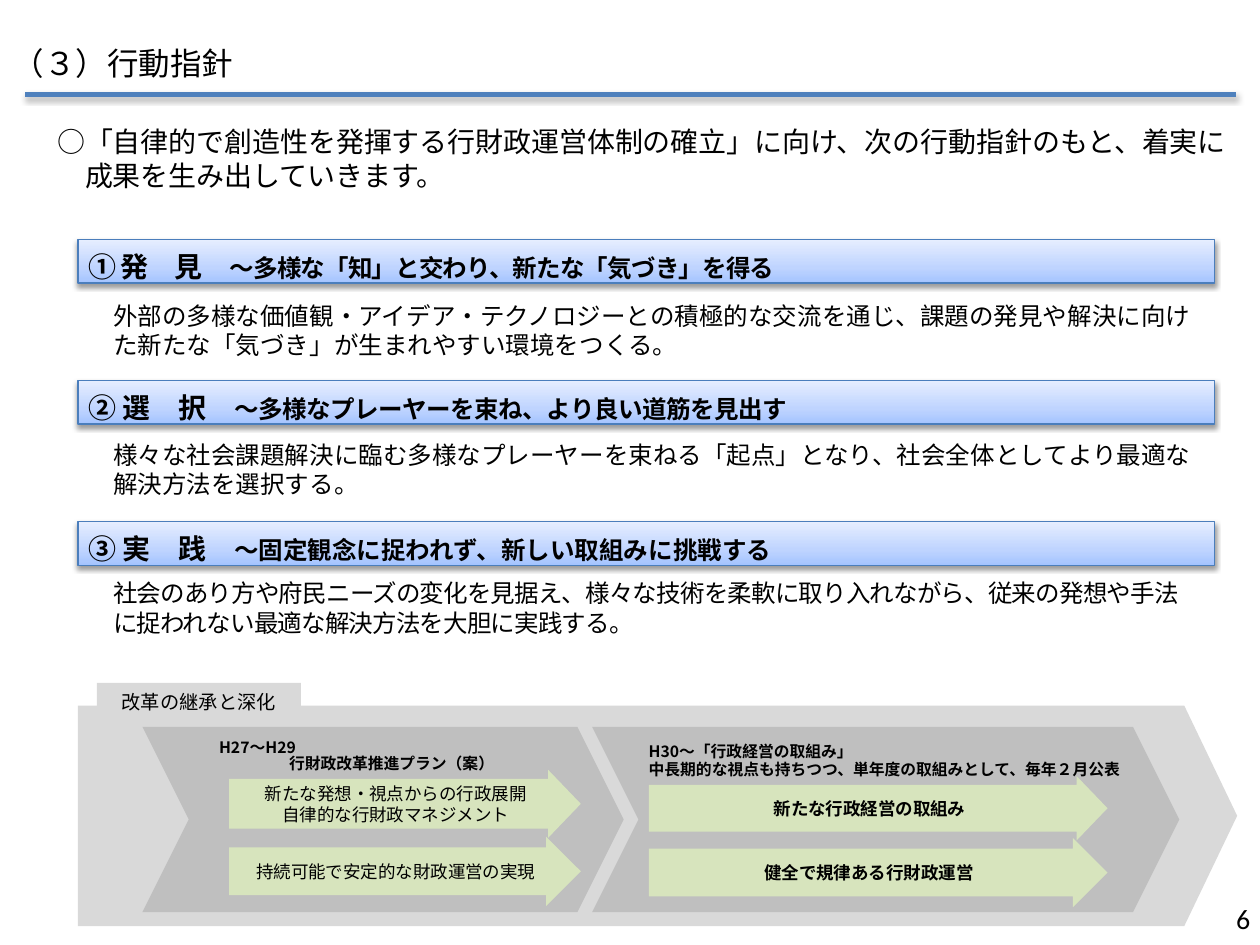
from lxml import etree
from pptx import Presentation
from pptx.dml import color
from pptx.enum import shapes, text
from pptx.oxml import ns
from pptx.util import Pt

# Content
TITLE = "（３）行動指針"
INTRO = "○\t「自律的で創造性を発揮する行財政運営体制の確立」に向け、次の行動指針のもと、着実に成果を生み出していきます。"
# Heading, its spacing, slogan, its spacing, description, its spacing
GUIDELINES = [
    ("① 発　見　", -50, "～多様な「知」と交わり、新たな「気づき」を得る", -50,
     "外部の多様な価値観・アイデア・テクノロジーとの積極的な交流を通じ、"
     "課題の発見や解決に向けた新たな「気づき」が生まれやすい環境をつくる。", 0),
    ("② 選　択　", 0, "～多様なプレーヤーを束ね、より良い道筋を見出す", -30,
     "様々な社会課題解決に臨む多様なプレーヤーを束ねる「起点」となり、"
     "社会全体としてより最適な解決方法を選択する。", 0),
    ("③ 実　践　", 0, "～固定観念に捉われず、新しい取組みに挑戦する", 0,
     "社会のあり方や府民ニーズの変化を見据え、様々な技術を柔軟に取り入れながら、"
     "従来の発想や手法に捉われない最適な解決方法を大胆に実践する。", -50),
]
ROADMAP_LABEL = "改革の継承と深化"
PHASES = [
    {"chevron": (81.4, 415.4, 275, 105.8), "caption": (118.1, 419.8, 200.9, 26),
     "lines": ["H27～H29", "行財政改革推進プラン（案）"], "leading": 9, "indents": [0, 40],
     "arrow_box": (131, 200.9), "bold": False,
     "arrows": [(439.9, 38.9, ["新たな発想・視点からの行政展開", "自律的な行財政マネジメント"]),
                (478.1, 39.6, ["持続可能で安定的な財政運営の実現"])]},
    {"chevron": (338.4, 415.4, 335.5, 105.8), "caption": (363.6, 421.2, 334, 37.4),
     "lines": ["H30～「行政経営の取組み」",
               "中長期的な視点も持ちつつ、単年度の取組みとして、毎年２月公表"],
     "leading": 10, "indents": [0, 0],
     "arrow_box": (370.8, 262.1), "bold": True,
     "arrows": [(443.5, 36.7, ["新たな行政経営の取組み"]),
                (478.8, 39.6, ["健全で規律ある行財政運営"])]},
]
ARROW_ADJUSTMENTS = [(0.73, 0.48), (0.69, 0.5)]
PAGE_NUMBER = "6"

THEME = {
    "font": "Noto Sans CJK JP", "number_font": "Calibri", "ink": "000000",
    "title": 18, "lead": 16, "body": 14, "label": 11, "arrow_text": 10, "caption": 9,
    "rule": "4F81BD", "banner_line": "4B7EBC",
    "banner": [(0, "A4C4FF"), (35, "BFD4FF"), (100, "E6EEFF")],
    "band": "D9D9D9", "chevron": "BFBFBF", "arrow": "D7E4BD",
}
LEFT, CENTER, RIGHT = text.PP_ALIGN.LEFT, text.PP_ALIGN.CENTER, text.PP_ALIGN.RIGHT
TOP, MIDDLE = text.MSO_ANCHOR.TOP, text.MSO_ANCHOR.MIDDLE
DEFAULT_INSETS = (7.2, 3.6, 7.2, 3.6)


def apply(target, values):
    for name, value in values.items():
        setattr(target, name, value)


def place(shape, box):
    apply(shape, dict(zip(("left", "top", "width", "height"), map(Pt, box))))


def format_frame(shape, anchor=TOP, insets=DEFAULT_INSETS):
    frame = shape.text_frame
    apply(frame, {"word_wrap": True, "auto_size": text.MSO_AUTO_SIZE.NONE,
                  "vertical_anchor": anchor})
    apply(frame, dict(zip(("margin_left", "margin_top", "margin_right", "margin_bottom"),
                          map(Pt, insets))))
    return frame


def add_run(paragraph, words, size, bold=False, spacing=0, font=THEME["font"]):
    run = paragraph.add_run()
    run.text = words
    apply(run.font, {"size": Pt(size), "bold": bold, "name": font})
    run.font.color.rgb = color.RGBColor.from_string(THEME["ink"])
    properties = run.font._element
    etree.SubElement(properties, ns.qn("a:ea"), typeface=font)
    if spacing:
        properties.set("spc", str(spacing))


def write(frame, lines, size, align=LEFT, leading=None, **run_format):
    for index, words in enumerate(lines):
        paragraph = frame.paragraphs[0] if index == 0 else frame.add_paragraph()
        paragraph.alignment = align
        if leading:
            paragraph.line_spacing = Pt(leading)
        add_run(paragraph, words, size, **run_format)


def add_text(slide, box, lines, size, anchor=TOP, **options):
    shape = slide.shapes.add_textbox(*map(Pt, box))
    frame = format_frame(shape, anchor)
    write(frame, lines, size, **options)
    return frame


def add_block(slide, kind, box, fill, adjustments=()):
    shape = slide.shapes.add_shape(kind, *map(Pt, box))
    shape.shadow.inherit = False
    shape.fill.solid()
    shape.fill.fore_color.rgb = color.RGBColor.from_string(fill)
    shape.line.fill.background()
    for index, value in enumerate(adjustments):
        shape.adjustments[index] = value
    return shape


def add_shadow(properties, opacity):
    for old in properties.findall(ns.qn("a:effectLst")):
        properties.remove(old)
    effects = etree.SubElement(properties, ns.qn("a:effectLst"))
    shadow = etree.SubElement(effects, ns.qn("a:outerShdw"), blurRad=str(Pt(3.1)),
                              dist=str(Pt(1.6)), dir="5400000", rotWithShape="0")
    tint = etree.SubElement(shadow, ns.qn("a:srgbClr"), val="000000")
    etree.SubElement(tint, ns.qn("a:alpha"), val=str(opacity * 1000))


def add_banner(slide, box):
    shape = add_block(slide, shapes.MSO_SHAPE.RECTANGLE, box, THEME["banner"][0][1])
    shape.line.color.rgb = color.RGBColor.from_string(THEME["banner_line"])
    shape.line.width = Pt(0.75)
    properties = shape._element.spPr
    gradient = etree.Element(ns.qn("a:gradFill"), rotWithShape="1")
    stops = etree.SubElement(gradient, ns.qn("a:gsLst"))
    for position, value in THEME["banner"]:
        stop = etree.SubElement(stops, ns.qn("a:gs"), pos=str(position * 1000))
        etree.SubElement(stop, ns.qn("a:srgbClr"), val=value)
    etree.SubElement(gradient, ns.qn("a:lin"), ang="16200000", scaled="0")
    properties.replace(properties.find(ns.qn("a:solidFill")), gradient)
    add_shadow(properties, 38)
    return shape


def add_heading(slide):
    # Title and rule
    place(slide.shapes.title, (0, 21.6, 719.3, 28.8))
    write(format_frame(slide.shapes.title), [TITLE], THEME["title"])
    rule = slide.shapes.add_connector(shapes.MSO_CONNECTOR.STRAIGHT,
                                      Pt(14.4), Pt(54), Pt(706.3), Pt(54))
    rule.line.color.rgb = color.RGBColor.from_string(THEME["rule"])
    rule.line.width = Pt(3)
    add_shadow(rule._element.spPr, 35)

    # Introduction with a hanging indent
    body = slide.placeholders[1]
    place(body, (9.4, 67.7, 699.8, 46))
    frame = format_frame(body)
    write(frame, [INTRO], THEME["lead"])
    paragraph = frame.paragraphs[0]
    paragraph.space_before = Pt(0)
    properties = paragraph._p.get_or_add_pPr()
    properties.set("marL", str(Pt(32)))
    properties.set("indent", str(Pt(-16)))
    etree.SubElement(properties, ns.qn("a:buNone"))
    tabs = etree.SubElement(properties, ns.qn("a:tabLst"))
    etree.SubElement(tabs, ns.qn("a:tab"), pos=str(Pt(39)), algn="l")


def add_guidelines(slide):
    for index, (name, name_gap, slogan, slogan_gap, detail, detail_gap) in enumerate(GUIDELINES):
        banner = add_banner(slide, (44.6, 136.8 + 80.6 * index, 649.4, 25))
        paragraph = format_frame(banner, insets=(5.8, 0, 5.8, 0)).paragraphs[0]
        apply(paragraph, {"alignment": LEFT, "line_spacing": Pt(25)})
        add_run(paragraph, name, THEME["lead"], True, name_gap)
        add_run(paragraph, slogan, THEME["body"], True, slogan_gap)
        add_text(slide, (57.6, 168.5 + 79.2 * index, 632, 41), [detail],
                 THEME["body"], spacing=detail_gap)


def add_roadmap(slide):
    kinds = shapes.MSO_SHAPE
    # Background band and its tab
    add_block(slide, kinds.PENTAGON, (44.6, 403.2, 662.4, 126), THEME["band"], [0.24])
    label = add_block(slide, kinds.RECTANGLE, (55.4, 390.2, 116.6, 21.6), THEME["band"])
    write(format_frame(label, MIDDLE), [ROADMAP_LABEL], THEME["label"], CENTER)

    # Phases with their arrows
    for phase in PHASES:
        add_block(slide, kinds.CHEVRON, phase["chevron"], THEME["chevron"], [0.25])
        caption = add_text(slide, phase["caption"], phase["lines"], THEME["caption"],
                           leading=phase["leading"], bold=True)
        for paragraph, indent in zip(caption.paragraphs, phase["indents"]):
            paragraph._p.get_or_add_pPr().set("marL", str(Pt(indent)))
        left, width = phase["arrow_box"]
        for (top, height, lines), adjustments in zip(phase["arrows"], ARROW_ADJUSTMENTS):
            arrow = add_block(slide, kinds.RIGHT_ARROW, (left, top, width, height),
                              THEME["arrow"], adjustments)
            write(format_frame(arrow, MIDDLE, (2.9, 3.6, 0, 3.6)), lines,
                  THEME["arrow_text"], CENTER, bold=phase["bold"])


def main():
    presentation = Presentation()
    apply(presentation, {"slide_width": Pt(720), "slide_height": Pt(540)})
    slide = presentation.slides.add_slide(presentation.slide_layouts[1])
    add_heading(slide)
    add_guidelines(slide)
    add_roadmap(slide)
    # Page number
    add_text(slide, (553.7, 510.5, 167.8, 28.8), [PAGE_NUMBER], THEME["lead"], MIDDLE,
             align=RIGHT, font=THEME["number_font"])
    presentation.save("out.pptx")


if __name__ == "__main__":
    main()
